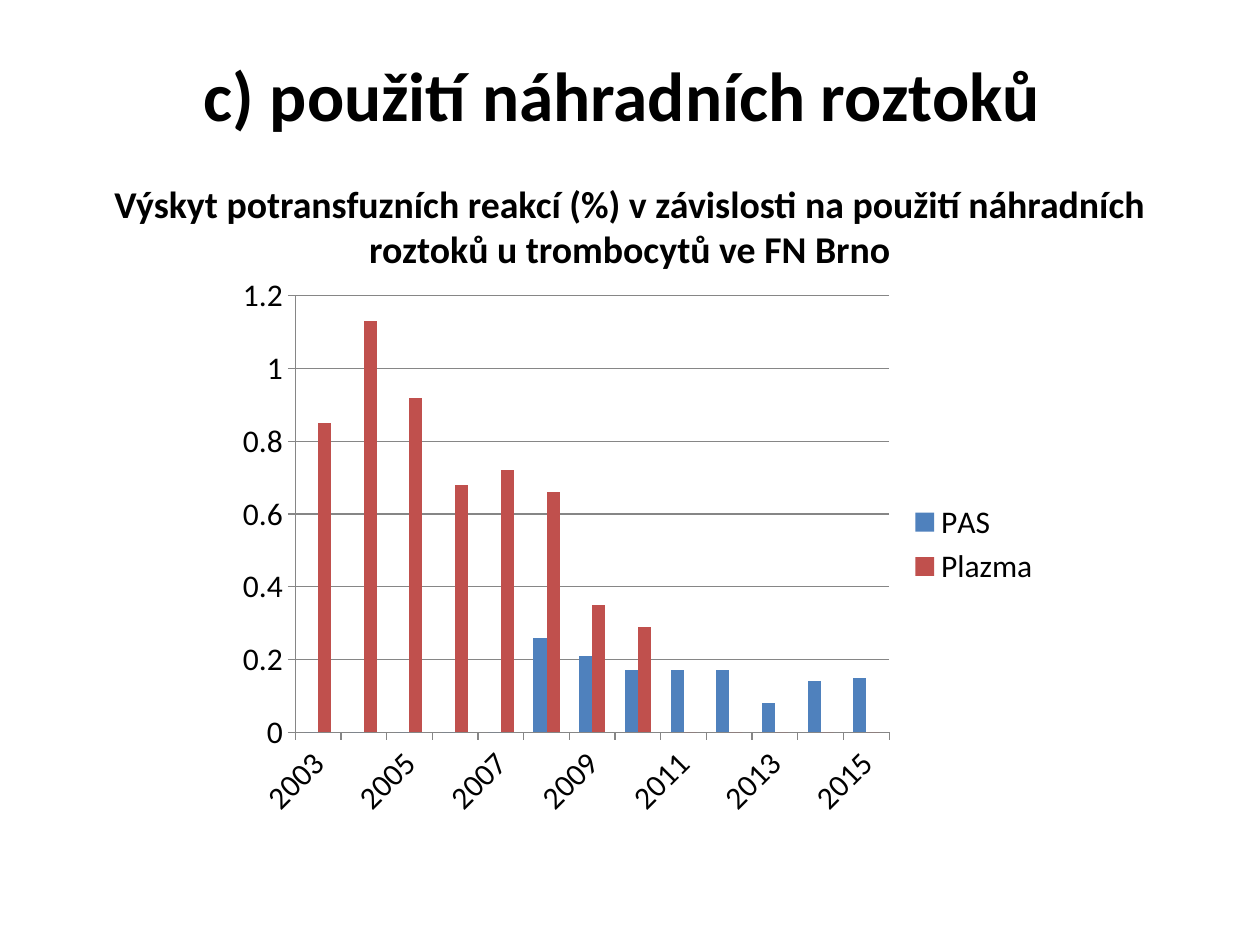
"""Build a slide comparing transfusion reactions for PAS and plasma platelets."""
from lxml import etree
from pptx import Presentation
from pptx.chart.data import CategoryChartData
from pptx.dml.color import RGBColor
from pptx.enum.chart import XL_CHART_TYPE, XL_LEGEND_POSITION, XL_TICK_MARK
from pptx.enum.text import MSO_ANCHOR, MSO_AUTO_SIZE, PP_ALIGN
from pptx.oxml import parse_xml
from pptx.oxml.ns import nsdecls, qn
from pptx.util import Pt


def color(value):
    return RGBColor.from_string(value)


def style_font(font, size, bold):
    font.name = "Calibri"
    font.size = Pt(size)
    font.bold = bold
    font.color.rgb = color("000000")


prs = Presentation()
prs.slide_width, prs.slide_height = Pt(720), Pt(540)
slide = prs.slides.add_slide(prs.slide_layouts[5])

heading = slide.shapes.title
heading.left, heading.top, heading.width, heading.height = Pt(36), Pt(21.6), Pt(648), Pt(90)
heading_frame = heading.text_frame
heading_frame.auto_size = MSO_AUTO_SIZE.NONE
heading_frame.word_wrap = True
heading_frame.vertical_anchor = MSO_ANCHOR.TOP
heading_frame.margin_top = Pt(8.1)
heading_frame.text = (
    "c) použití náhradních roztoků \n"
    "Výskyt potransfuzních reakcí (%) v závislosti na použití náhradních roztoků u trombocytů ve FN Brno"
)
for paragraph, size, gap in zip(heading_frame.paragraphs, (39.6, 21.6), (0, 26)):
    paragraph.alignment = PP_ALIGN.CENTER
    paragraph.space_before = Pt(gap)
    style_font(paragraph.font, size, True)

chart_width, chart_height = 480.2, 319.7
reactions = CategoryChartData()
reactions.categories = [str(year) for year in range(2003, 2016)]
reactions.add_series("PAS", [0] * 5 + [0.26, 0.21, 0.17, 0.17, 0.17, 0.08, 0.14, 0.15])
reactions.add_series("Plazma", [0.85, 1.13, 0.92, 0.68, 0.72, 0.66, 0.35, 0.29] + [0] * 5)
chart = slide.shapes.add_chart(
    XL_CHART_TYPE.COLUMN_CLUSTERED, Pt(121.7), Pt(151.2), Pt(chart_width), Pt(chart_height), reactions
).chart
style_font(chart.font, 18, False)
chart.has_title = False
chart.has_legend = True
chart.legend.position = XL_LEGEND_POSITION.RIGHT
chart.legend.include_in_layout = False

columns = chart.plots[0]
columns.gap_width = 150
columns.vary_by_categories = False
for series, fill in zip(columns.series, ("4F81BD", "C0504D")):
    series.format.fill.solid()
    series.format.fill.fore_color.rgb = color(fill)
    series.invert_if_negative = False

chart.value_axis.has_major_gridlines = True
for axis in (chart.category_axis, chart.value_axis):
    axis.major_tick_mark = XL_TICK_MARK.OUTSIDE
    axis.minor_tick_mark = XL_TICK_MARK.NONE
for ruled in (chart.category_axis, chart.value_axis, chart.value_axis.major_gridlines):
    ruled.format.line.color.rgb = color("868686")
    ruled.format.line.width = Pt(0.75)

plot_area = chart.element.find(".//" + qn("c:plotArea"))
for old_layout in plot_area.findall(qn("c:layout")):
    plot_area.remove(old_layout)
layout = parse_xml(f"<c:layout {nsdecls('c')}/>")
manual = etree.SubElement(layout, qn("c:manualLayout"))
for tag, value in (
    ("layoutTarget", "inner"), ("xMode", "edge"), ("yMode", "edge"),
    ("x", 47 / chart_width), ("y", 17.9 / chart_height),
    ("w", 339.5 / chart_width), ("h", 249.4 / chart_height),
):
    etree.SubElement(manual, qn(f"c:{tag}")).set("val", str(value))
plot_area.insert(0, layout)

prs.save("out.pptx")
